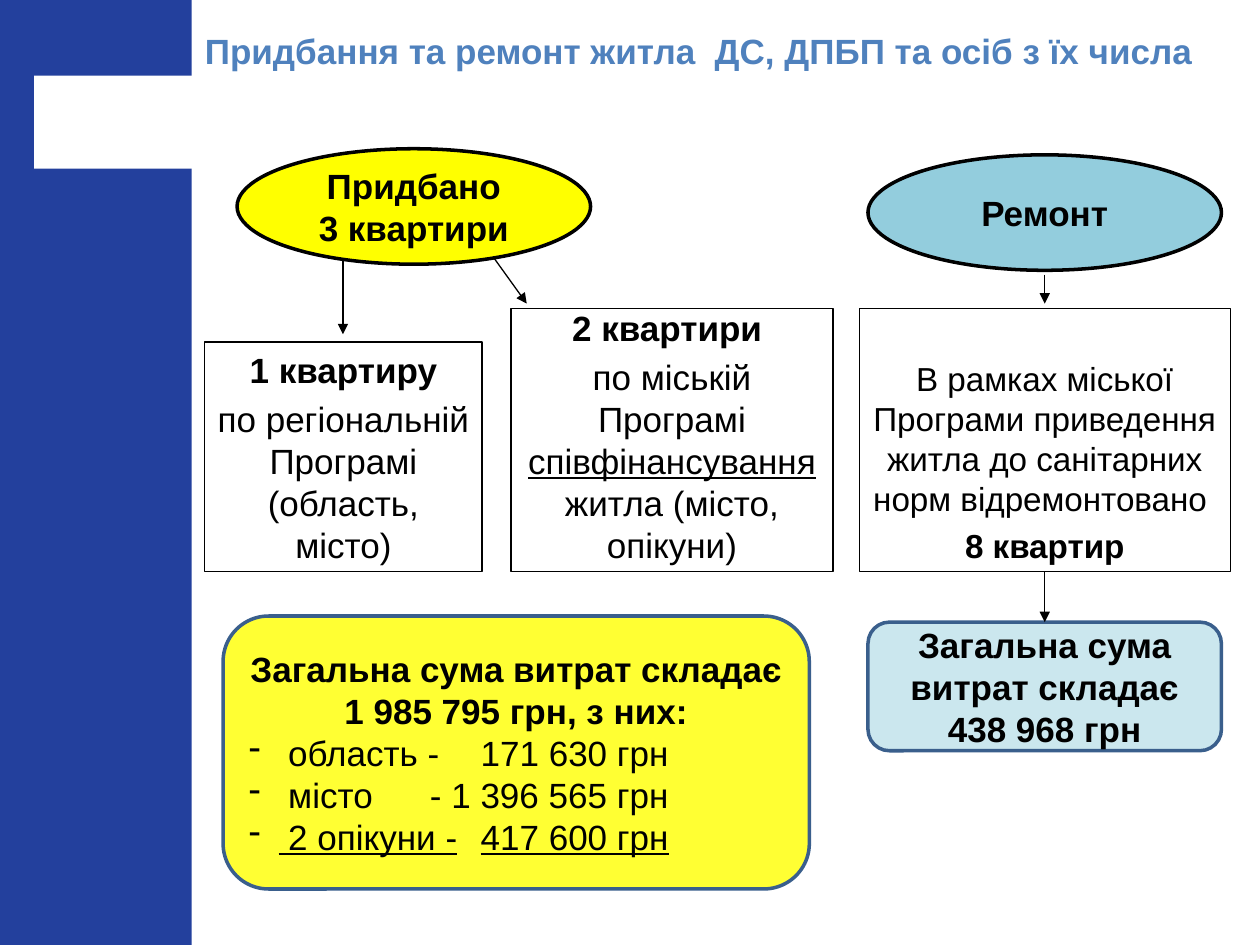
from dataclasses import dataclass
from typing import Optional

import lxml.etree
import pptx
import pptx.dml.color
import pptx.enum.shapes
import pptx.enum.text
import pptx.oxml.ns
import pptx.util

Pt = pptx.util.Pt
qn = pptx.oxml.ns.qn
Geometry = pptx.enum.shapes.MSO_SHAPE
Anchor = pptx.enum.text.MSO_ANCHOR
Align = pptx.enum.text.PP_ALIGN


@dataclass(frozen=True)
class Theme:
    font: str = "Arial"
    text_size: float = 20
    small_size: float = 19
    paragraph_gap: float = 4
    bullet_indent: float = 17
    amount_tab: float = 240
    thin: float = 0.75
    thick: float = 2
    black: str = "000000"
    white: str = "FFFFFF"
    navy: str = "23409D"
    title: str = "4F81BD"
    outline: str = "3A5F8C"
    yellow: str = "FFFF00"
    blue: str = "93CDDD"
    pale_blue: str = "B7DEE8"


THEME = Theme()


@dataclass(frozen=True)
class Run:
    text: str
    bold: bool = False
    underline: bool = False


@dataclass(frozen=True)
class Line:
    runs: tuple[Run, ...]
    gap: float = 0
    bullet: bool = False


@dataclass(frozen=True)
class Block:
    left: float
    top: float
    width: float
    height: float
    geometry: Geometry
    fill: Optional[str] = None
    opacity: int = 100
    outline: Optional[str] = None
    weight: float = THEME.thin
    lines: tuple[Line, ...] = ()
    size: float = THEME.text_size
    anchor: Anchor = Anchor.MIDDLE


@dataclass(frozen=True)
class Arrow:
    start: tuple[float, float]
    end: tuple[float, float]


def rgb(value: str) -> pptx.dml.color.RGBColor:
    return pptx.dml.color.RGBColor.from_string(value)


def bold_line(text: str, gap: float = 0) -> Line:
    return Line((Run(text, bold=True),), gap)


def amount_line(label: str, amount: str, underline: bool = False) -> Line:
    """Dashed item whose amount is right-aligned at a tab stop."""
    return Line((Run(f" {label}\t{amount}", underline=underline),), bullet=True)


def add_bullet(paragraph) -> None:
    properties = paragraph._p.get_or_add_pPr()
    indent = Pt(THEME.bullet_indent)
    properties.set("marL", str(indent))
    properties.set("indent", str(-indent))
    lxml.etree.SubElement(properties, qn("a:buChar")).set("char", "-")
    tabs = lxml.etree.SubElement(properties, qn("a:tabLst"))
    tab = lxml.etree.SubElement(tabs, qn("a:tab"))
    tab.set("pos", str(Pt(THEME.amount_tab)))
    tab.set("algn", "r")


def write_lines(frame, lines: tuple[Line, ...], size: float, color: str,
                align: Align, anchor: Anchor) -> None:
    frame.word_wrap = True
    frame.vertical_anchor = anchor
    for index, line in enumerate(lines):
        paragraph = frame.add_paragraph() if index else frame.paragraphs[0]
        paragraph.alignment = Align.LEFT if line.bullet else align
        if line.gap:
            paragraph.space_before = Pt(line.gap)
        if line.bullet:
            add_bullet(paragraph)
        for part in line.runs:
            run = paragraph.add_run()
            run.text = part.text
            run.font.name = THEME.font
            run.font.size = Pt(size)
            run.font.bold = part.bold
            run.font.underline = part.underline
            run.font.color.rgb = rgb(color)


def draw_block(slide, block: Block):
    shape = slide.shapes.add_shape(block.geometry, Pt(block.left), Pt(block.top),
                                   Pt(block.width), Pt(block.height))
    shape.shadow.inherit = False
    if block.fill:
        shape.fill.solid()
        shape.fill.fore_color.rgb = rgb(block.fill)
        if block.opacity < 100:
            color = shape._element.spPr.find(qn("a:solidFill"))[0]
            lxml.etree.SubElement(color, qn("a:alpha")).set("val", str(block.opacity * 1000))
    else:
        shape.fill.background()
    if block.outline:
        shape.line.color.rgb = rgb(block.outline)
        shape.line.width = Pt(block.weight)
    else:
        shape.line.fill.background()
    if block.lines:
        write_lines(shape.text_frame, block.lines, block.size, THEME.black,
                    Align.CENTER, block.anchor)
    return shape


def draw_arrow(slide, arrow: Arrow):
    connector = slide.shapes.add_connector(
        pptx.enum.shapes.MSO_CONNECTOR.STRAIGHT, *map(Pt, arrow.start + arrow.end))
    connector.line.color.rgb = rgb(THEME.black)
    connector.line.width = Pt(THEME.thin)
    outline = connector.line._get_or_add_ln()
    lxml.etree.SubElement(outline, qn("a:tailEnd")).set("type", "triangle")
    lxml.etree.SubElement(connector._element.spPr, qn("a:effectLst"))
    return connector


def draw_title(slide, text: str) -> None:
    box = slide.shapes.add_textbox(Pt(110), Pt(3.6), Pt(598), Pt(51))
    write_lines(box.text_frame, (bold_line(text),), THEME.text_size, THEME.title,
                Align.LEFT, Anchor.MIDDLE)


GAP = THEME.paragraph_gap
SIDEBAR = (
    Block(0, 0, 109.5, 540, Geometry.RECTANGLE, THEME.navy),
    Block(19.5, 43.2, 95.5, 53.2, Geometry.RECTANGLE, THEME.white),
)
ARROWS = (
    Arrow((196, 134), (196, 191)),
    Arrow((269, 129), (301, 173.5)),
    Arrow((597, 157), (597, 173.5)),
)
BOUGHT = (
    Block(135.5, 85, 202, 66, Geometry.OVAL, THEME.yellow, outline=THEME.black,
          weight=THEME.thick, lines=(bold_line("Придбано"), bold_line("3 квартири"))),
    Block(117, 195.5, 158.5, 131, Geometry.RECTANGLE, outline=THEME.black,
          anchor=Anchor.BOTTOM, lines=(
              bold_line("1 квартиру"),
              Line((Run("по регіональній Програмі (область, місто)"),), GAP))),
    Block(292, 176.5, 184, 150, Geometry.RECTANGLE, outline=THEME.black,
          anchor=Anchor.BOTTOM, lines=(
              bold_line("2 квартири "),
              Line((Run("по міській Програмі "),
                    Run("співфінансування", underline=True),
                    Run(" житла (місто, опікуни)")), GAP))),
    Block(127.5, 352, 335, 156, Geometry.ROUNDED_RECTANGLE, THEME.yellow, 80,
          THEME.outline, THEME.thick, lines=(
              bold_line("Загальна сума витрат складає 1 985 795 грн, з них:"),
              amount_line("область -", "171 630 грн"),
              amount_line("місто", "- 1 396 565 грн"),
              amount_line("2 опікуни -", "417 600 грн", underline=True))),
)
REPAIR = Block(496, 88.5, 202, 66, Geometry.OVAL, THEME.blue, outline=THEME.black,
               weight=THEME.thick, lines=(bold_line("Ремонт"),))
REPAIR_DETAILS = Block(
    491, 176.5, 212, 150, Geometry.RECTANGLE, THEME.white, outline=THEME.black,
    size=THEME.small_size, anchor=Anchor.BOTTOM, lines=(
        Line((Run("В рамках міської Програми приведення житла до санітарних "
                  "норм відремонтовано "),)),
        bold_line("8 квартир", GAP)))
REPAIR_TOTAL = Block(
    496, 355.5, 202, 73.5, Geometry.ROUNDED_RECTANGLE, THEME.pale_blue, 72,
    THEME.outline, THEME.thick,
    lines=(bold_line("Загальна сума витрат складає 438 968 грн"),))


def main() -> None:
    presentation = pptx.Presentation()
    presentation.slide_width, presentation.slide_height = Pt(720), Pt(540)
    slide = presentation.slides.add_slide(presentation.slide_layouts[6])
    for block in SIDEBAR:
        draw_block(slide, block)
    for arrow in ARROWS:
        draw_arrow(slide, arrow)
    draw_title(slide, "Придбання та ремонт житла  ДС, ДПБП та осіб з їх числа")
    for block in BOUGHT + (REPAIR,):
        draw_block(slide, block)
    details = draw_block(slide, REPAIR_DETAILS)
    total = draw_block(slide, REPAIR_TOTAL)
    connector = draw_arrow(slide, Arrow((597, 326.5), (597, 355.5)))
    connector.begin_connect(details, 2)
    connector.end_connect(total, 0)
    presentation.save("out.pptx")


if __name__ == "__main__":
    main()
